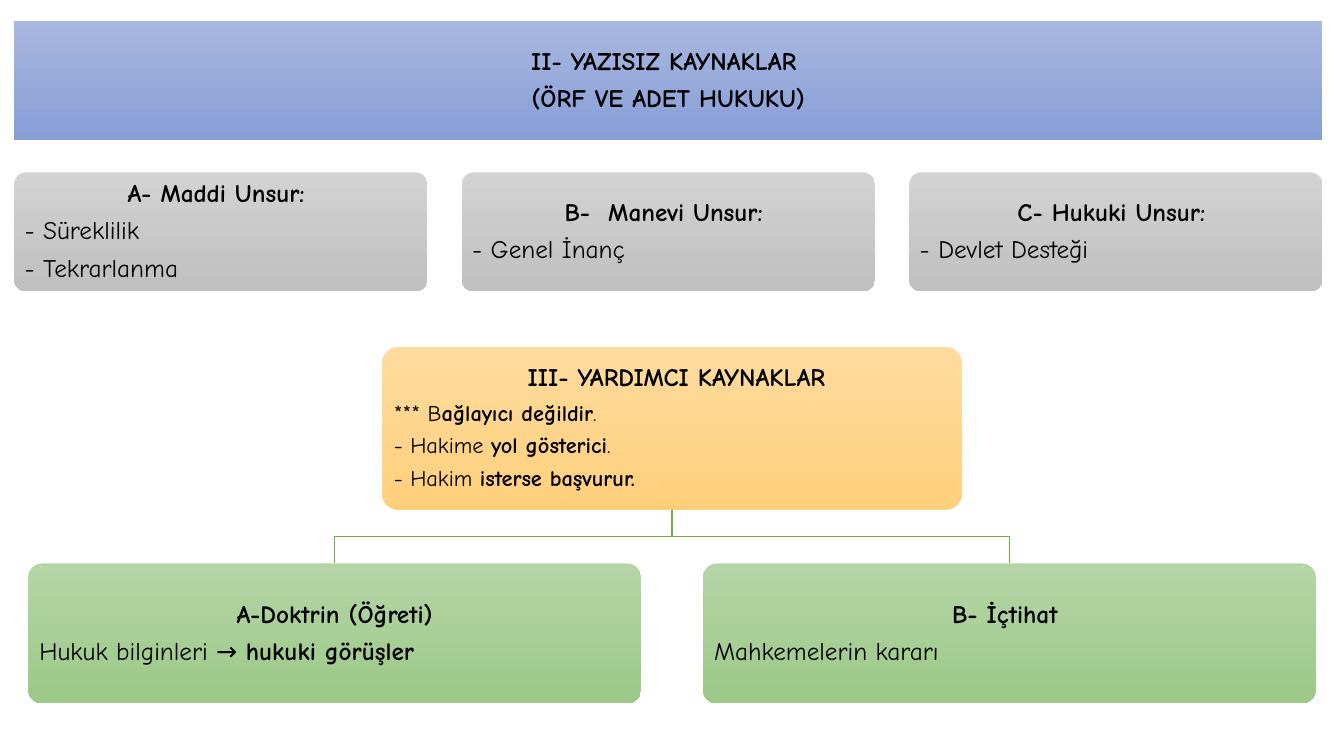
from pptx import Presentation
from pptx.dml.color import RGBColor
from pptx.enum.shapes import MSO_SHAPE
from pptx.enum.text import MSO_ANCHOR, MSO_AUTO_SIZE, PP_ALIGN
from pptx.oxml import parse_xml
from pptx.oxml.ns import nsdecls
from pptx.util import Inches, Pt

BLACK = RGBColor(0x00, 0x00, 0x00)
GREEN_LINE = RGBColor(0x70, 0xAD, 0x47)
BLUE = (RGBColor(0xA8, 0xB7, 0xDF), RGBColor(0x88, 0x9E, 0xD7))
GRAY = (RGBColor(0xD2, 0xD2, 0xD2), RGBColor(0xC0, 0xC0, 0xC0))
ORANGE = (RGBColor(0xFF, 0xDB, 0x9E), RGBColor(0xFF, 0xD0, 0x7C))
GREEN = (RGBColor(0xB5, 0xD5, 0xA7), RGBColor(0x9C, 0xC9, 0x87))

HEADINGS = ["II- YAZISIZ KAYNAKLAR ", "(ÖRF VE ADET HUKUKU)"]
ELEMENTS = [
    ("A- Maddi Unsur: ", [[("- Süreklilik", False)], [("- Tekrarlanma", False)]]),
    ("B-  Manevi Unsur: ", [[("- Genel İnanç", False)]]),
    ("C- Hukuki Unsur: ", [[("- Devlet Desteği", False)]]),
]
AUXILIARY_LINES = [
    [("*** B", False), ("ağlayıcı değildir", True), (". ", False)],
    [("- Hakime ", False), ("yol gösterici", True), (". ", False)],
    [("- Hakim ", False), ("isterse başvurur. ", True)],
]
BRANCHES = [
    ("A-Doktrin (Öğreti)", [[("Hukuk bilginleri → ", False), ("hukuki görüşler", True)]]),
    ("B- İçtihat ", [[("Mahkemelerin kararı", False)]]),
]


def add_text(paragraph, text, size=18, bold=False, color=BLACK, font="Comic Neue"):
    """Add a formatted run to a paragraph."""
    run = paragraph.add_run()
    run.text = text
    run.font.name = font
    run.font.size = Pt(size)
    run.font.bold = bold
    run.font.color.rgb = color


class SourcesSlide:
    """Draw cards and branches on a slide measured in 100 columns and 100 rows."""

    def __init__(self, presentation):
        """Add a title-only slide to the presentation."""
        self.column = presentation.slide_width / 100
        self.row = presentation.slide_height / 100
        self.slide = presentation.slides.add_slide(presentation.slide_layouts[5])

    def place(self, column, row):
        """Convert a grid position to slide units."""
        return round(column * self.column), round(row * self.row)

    def style(self, shape, colors):
        """Give a card its gradient, its margins and no outline."""
        shape.fill.gradient()
        shape.fill.gradient_angle = 270
        for stop, color in zip(shape.fill.gradient_stops, colors):
            stop.color.rgb = color
        shape.line.fill.background()
        frame = shape.text_frame
        frame.word_wrap = True
        frame.auto_size = MSO_AUTO_SIZE.NONE
        frame.vertical_anchor = MSO_ANCHOR.MIDDLE
        frame.margin_left = frame.margin_right = Inches(0.07)
        frame.margin_top = frame.margin_bottom = Inches(0.07)

    def add_lines(self, shape, lines, headings=1, size=18):
        """Set centred headings followed by justified lines."""
        frame = shape.text_frame
        for index, line in enumerate(lines):
            paragraph = frame.add_paragraph() if index else frame.paragraphs[0]
            is_heading = index < headings
            line_size = 18 if is_heading else size
            paragraph.alignment = PP_ALIGN.CENTER if is_heading else PP_ALIGN.JUSTIFY
            paragraph.line_spacing = 0.9
            paragraph.space_after = Pt(line_size * 0.39)
            for text, bold in line:
                add_text(paragraph, text, size=line_size, bold=bold)

    def title(self, left, top, width, height, headings, colors):
        """Turn the title placeholder into a rounded heading card."""
        title = self.slide.shapes.title
        title.left, title.top = self.place(left, top)
        title.width, title.height = self.place(width, height)
        title._element.spPr.insert(1, parse_xml(
            f'<a:prstGeom {nsdecls("a")} prst="roundRect"><a:avLst>'
            '<a:gd name="adj" fmla="val 10000"/></a:avLst></a:prstGeom>'))
        self.style(title, colors)
        self.add_lines(title, [[(text, True)] for text in headings], headings=len(headings))

    def card(self, left, top, width, height, heading, lines, colors, size=18):
        """Add a rounded card with a heading and its lines."""
        card = self.slide.shapes.add_shape(
            MSO_SHAPE.ROUNDED_RECTANGLE, *self.place(left, top), *self.place(width, height))
        card.adjustments[0] = 0.1
        card.shadow.inherit = False
        self.style(card, colors)
        self.add_lines(card, [[(heading, True)], *lines], size=size)

    def branch(self, start, end):
        """Draw a bent line down from one grid point to another."""
        middle = (start[1] + end[1]) / 2
        builder = self.slide.shapes.build_freeform(*self.place(*start))
        corners = [(start[0], middle), (end[0], middle), end]
        builder.add_line_segments([self.place(*corner) for corner in corners], close=False)
        branch = builder.convert_to_shape()
        branch.fill.background()
        branch.line.color.rgb = GREEN_LINE
        branch.line.width = Pt(1)
        branch.shadow.inherit = False


def main():
    """Build and save the slide."""
    presentation = Presentation()
    presentation.slide_width = Inches(13.33)
    presentation.slide_height = Inches(7.5)
    sources = SourcesSlide(presentation)

    sources.title(1.05, 2.8, 97.35, 15.73, HEADINGS, BLUE)
    for index, (heading, lines) in enumerate(ELEMENTS):
        sources.card(1.05 + index * 33.3, 22.8, 30.75, 15.73, heading, lines, GRAY)

    sources.card(28.43, 45.87, 43.14, 21.53, " III- YARDIMCI KAYNAKLAR",
                 AUXILIARY_LINES, ORANGE, size=16)
    width, top = 45.6, 74.53
    for index, (heading, lines) in enumerate(BRANCHES):
        left = 2.1 + index * 50.2
        sources.branch((50, 67.4), (left + width / 2, top))
        sources.card(left, top, width, 18.53, heading, lines, GREEN)

    presentation.save("out.pptx")


if __name__ == "__main__":
    main()
